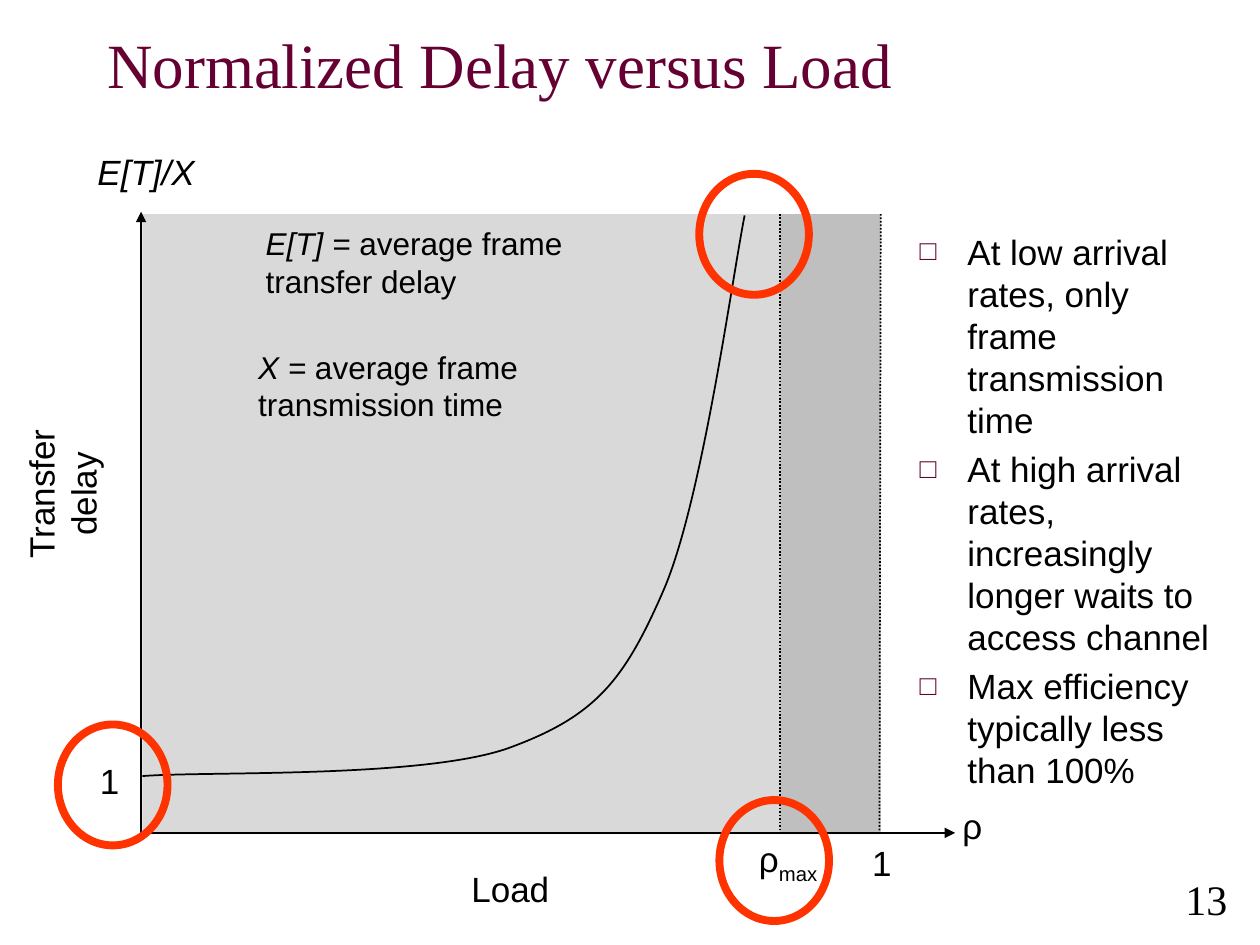
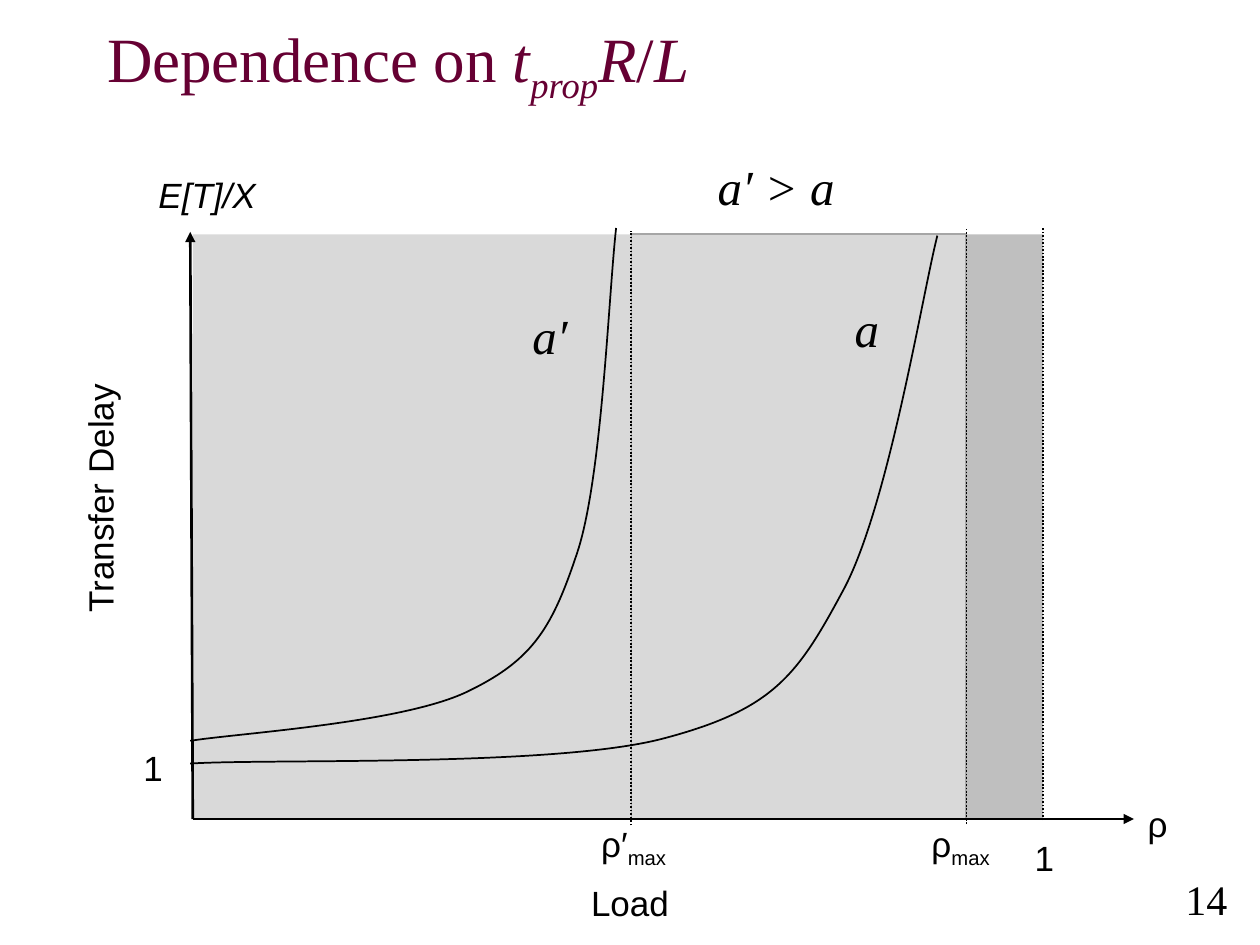
from dataclasses import dataclass
from typing import Optional

from lxml.etree import SubElement
from pptx import Presentation
from pptx.dml.color import RGBColor
from pptx.enum.dml import MSO_LINE
from pptx.enum.shapes import MSO_CONNECTOR, MSO_SHAPE
from pptx.enum.text import MSO_ANCHOR, PP_ALIGN
from pptx.oxml.ns import qn
from pptx.util import Emu, Pt

# Shared look: 100 px to the inch
SCALE = 9144
SANS, SERIF = "Arial", "Times New Roman"
BLACK, MAROON, RED = "000000", "660033", "FF3300"
STABLE_GRAY, OVERLOAD_GRAY, EDGE_GRAY = "D9D9D9", "BFBFBF", "A6A6A6"

Box = tuple[int, int, int, int]
Point = tuple[int, int]


@dataclass(frozen=True)
class Run:
    text: str
    italic: bool = False
    subscript: bool = False


@dataclass(frozen=True)
class Style:
    font: str = SANS
    size: int = 20
    color: str = BLACK
    align: PP_ALIGN = PP_ALIGN.CENTER
    anchor: MSO_ANCHOR = MSO_ANCHOR.MIDDLE
    wrap: bool = False


@dataclass(frozen=True)
class Label:
    box: Box
    paragraphs: list[list[Run]]
    style: Style = Style()
    rotation: int = 0


@dataclass(frozen=True)
class Region:
    box: Box
    fill: Optional[str] = None
    line: Optional[str] = None
    weight: float = 1
    kind: MSO_SHAPE = MSO_SHAPE.RECTANGLE


@dataclass(frozen=True)
class Line:
    start: Point
    end: Point
    arrow: bool = False


AXIS_LABEL = Style()
CURVE_LABEL = Style(font=SERIF, size=28)
TITLE = Style(SERIF, 36, MAROON, PP_ALIGN.LEFT, wrap=True)
PAGE_NUMBER = Style(SERIF, 24, align=PP_ALIGN.RIGHT, anchor=MSO_ANCHOR.TOP, wrap=True)
DEFINITION = Style(size=18, align=PP_ALIGN.LEFT, anchor=MSO_ANCHOR.TOP, wrap=True)
BODY = Style(align=PP_ALIGN.LEFT, anchor=MSO_ANCHOR.TOP, wrap=True)
WRAPPED = Style(wrap=True)


def px(value: int) -> Emu:
    return Emu(value * SCALE)


def rgb(color: str) -> RGBColor:
    return RGBColor.from_string(color)


# Text
def add_runs(paragraph, runs: list[Run], style: Style) -> None:
    paragraph.alignment = style.align
    for part in runs:
        run = paragraph.add_run()
        run.text = part.text
        run.font.name = style.font
        run.font.size = Pt(style.size)
        run.font.italic = part.italic
        run.font.color.rgb = rgb(style.color)
        if part.subscript:
            run.font._element.set("baseline", "-25000")


def fill_text(shape, paragraphs: list[list[Run]], style: Style) -> None:
    frame = shape.text_frame
    frame.word_wrap = style.wrap
    frame.vertical_anchor = style.anchor
    for index, runs in enumerate(paragraphs):
        paragraph = frame.add_paragraph() if index else frame.paragraphs[0]
        add_runs(paragraph, runs, style)


def add_label(slide, label: Label):
    shape = slide.shapes.add_textbox(*map(px, label.box))
    shape.rotation = label.rotation
    fill_text(shape, label.paragraphs, label.style)
    return shape


def add_bullets(slide, box: Box, items: list[str]) -> None:
    shape = add_label(slide, Label(box, [[Run(item)] for item in items], BODY))
    for index, paragraph in enumerate(shape.text_frame.paragraphs):
        properties = paragraph._p.get_or_add_pPr()
        properties.set("marL", str(px(38)))
        properties.set("indent", str(px(-38)))
        if index:
            paragraph.space_before = Pt(4)
        bullet_color = SubElement(properties, qn("a:buClr"))
        SubElement(bullet_color, qn("a:srgbClr"), val=MAROON)
        SubElement(properties, qn("a:buSzPct"), val="80000")
        SubElement(properties, qn("a:buFont"), typeface=SANS)
        SubElement(properties, qn("a:buChar"), char="□")


# Shapes, lines and curves
def add_region(slide, region: Region) -> None:
    shape = slide.shapes.add_shape(region.kind, *map(px, region.box))
    shape.shadow.inherit = False
    if region.fill:
        shape.fill.solid()
        shape.fill.fore_color.rgb = rgb(region.fill)
    else:
        shape.fill.background()
    if region.line:
        shape.line.color.rgb = rgb(region.line)
        shape.line.width = Pt(region.weight)
    else:
        shape.line.fill.background()


def add_line(slide, line: Line) -> None:
    connector = slide.shapes.add_connector(
        MSO_CONNECTOR.STRAIGHT, *map(px, line.start + line.end))
    connector.line.color.rgb = rgb(BLACK)
    connector.line.width = Pt(1.5 if line.arrow else 1)
    if line.arrow:
        SubElement(connector.line._get_or_add_ln(), qn("a:tailEnd"), type="triangle")
    else:
        connector.line.dash_style = MSO_LINE.ROUND_DOT
    SubElement(connector._element.spPr, qn("a:effectLst"))


def add_curve(slide, points: list[Point]) -> None:
    """Draw a start point followed by cubic segments of three points each."""
    builder = slide.shapes.build_freeform(*points[0], scale=SCALE)
    builder.add_line_segments(points[1:], close=False)
    shape = builder.convert_to_shape()
    # Turn every three straight steps into one cubic segment
    outline = next(shape._element.iter(qn("a:path")))
    steps = outline.findall(qn("a:lnTo"))
    for first in range(0, len(steps), 3):
        segment = SubElement(outline, qn("a:cubicBezTo"))
        for step in steps[first:first + 3]:
            segment.append(step[0])
            outline.remove(step)
    shape.shadow.inherit = False
    shape.fill.background()
    shape.line.color.rgb = rgb(BLACK)
    shape.line.width = Pt(1)


# Slide frame and delay plot
def add_titled_slide(presentation, title: list[Run], number: int):
    slide = presentation.slides.add_slide(presentation.slide_layouts[5])
    shape = slide.shapes.title
    shape.left, shape.top, shape.width, shape.height = map(px, (75, 0, 850, 100))
    fill_text(shape, [title], TITLE)
    add_label(slide, Label((859, 688, 125, 51), [[Run(str(number))]], PAGE_NUMBER))
    return slide


def add_plot(slide, regions: list[Region], lines: list[Line],
             curves: list[list[Point]], labels: list[Label]) -> None:
    for region in regions:
        add_region(slide, region)
    for line in lines:
        add_line(slide, line)
    for curve in curves:
        add_curve(slide, curve)
    for label in labels:
        add_label(slide, label)


def build_delay_versus_load(presentation) -> None:
    slide = add_titled_slide(presentation, [Run("Normalized Delay versus Load")], 13)
    add_plot(
        slide,
        regions=[Region((619, 170, 80, 492), OVERLOAD_GRAY),
                 Region((113, 170, 506, 492), STABLE_GRAY)],
        lines=[Line((111, 661), (758, 661), arrow=True),
               Line((112, 664), (112, 168), arrow=True),
               Line((698, 659), (699, 170)),
               Line((619, 659), (619, 170))],
        curves=[[(113, 616), (162, 612), (334, 618), (403, 594), (472, 569),
                 (495, 541), (526, 470), (557, 400), (581, 221), (591, 171)]],
        labels=[
            Label((364, 684, 82, 43), [[Run("Load")]]),
            Label((-26, 355, 150, 74), [[Run("Transfer delay")]], WRAPPED, 270),
            Label((60, 115, 112, 43), [[Run("E[T]/X", italic=True)]]),
            Label((754, 634, 35, 43), [[Run("ρ")]]),
            Label((587, 662, 77, 43), [[Run("ρ"), Run("max", subscript=True)]]),
            Label((682, 663, 36, 43), [[Run("1")]]),
            Label((69, 598, 36, 43), [[Run("1")]]),
            Label((201, 173, 298, 70),
                  [[Run("E[T] =", italic=True), Run(" average frame")],
                   [Run("transfer delay")]], DEFINITION),
            Label((195, 271, 325, 70),
                  [[Run("X =", italic=True), Run(" average frame")],
                   [Run("transmission time")]], DEFINITION),
        ])
    add_bullets(slide, (720, 178, 257, 434), [
        "At low arrival rates, only frame transmission time",
        "At high arrival rates, increasingly longer waits to access channel",
        "Max efficiency typically less than 100%",
    ])
    # Rings around the three key points
    for left, top in ((46, 575), (555, 138), (571, 635)):
        add_region(slide, Region((left, top, 87, 96), line=RED, weight=4.5,
                                 kind=MSO_SHAPE.OVAL))


def build_dependence(presentation) -> None:
    slide = add_titled_slide(presentation, [
        Run("Dependence on "), Run("t", italic=True),
        Run("prop", italic=True, subscript=True), Run("R", italic=True),
        Run("/"), Run("L", italic=True)], 14)
    add_plot(
        slide,
        regions=[Region((767, 186, 61, 464), OVERLOAD_GRAY),
                 Region((501, 186, 266, 464), STABLE_GRAY, EDGE_GRAY),
                 Region((153, 186, 348, 464), STABLE_GRAY)],
        lines=[Line((153, 650), (900, 650), arrow=True),
               Line((153, 650), (151, 184), arrow=True),
               Line((828, 651), (828, 180)),
               Line((767, 654), (767, 182)),
               Line((501, 655), (501, 183))],
        curves=[[(151, 606), (214, 602), (441, 609), (527, 586), (614, 563),
                 (633, 536), (669, 469), (705, 403), (732, 234), (744, 187)],
                [(151, 588), (188, 582), (322, 574), (373, 548), (424, 523),
                 (439, 497), (459, 436), (478, 375), (483, 235), (489, 181)]],
        labels=[
            Label((-22, 374, 202, 43), [[Run("Transfer Delay")]], AXIS_LABEL, 270),
            Label((459, 695, 82, 43), [[Run("Load")]]),
            Label((116, 133, 97, 43), [[Run("E[T]/X", italic=True)]]),
            Label((901, 632, 35, 43), [[Run("ρ")]]),
            Label((716, 650, 93, 43), [[Run("ρ"), Run("max", subscript=True)]]),
            Label((811, 659, 36, 43), [[Run("1")]]),
            Label((104, 588, 35, 43), [[Run("1")]]),
            Label((450, 650, 106, 43), [[Run("ρ′"), Run("max", subscript=True)]]),
            Label((668, 232, 40, 57), [[Run("a", italic=True)]], CURVE_LABEL),
            Label((412, 237, 49, 57), [[Run("a′", italic=True)]], CURVE_LABEL),
            Label((559, 119, 114, 57), [[Run("a′ > a", italic=True)]], CURVE_LABEL),
        ])


def main() -> None:
    presentation = Presentation()
    presentation.slide_width, presentation.slide_height = px(1000), px(750)
    build_delay_versus_load(presentation)
    build_dependence(presentation)
    presentation.save("out.pptx")


if __name__ == "__main__":
    main()
